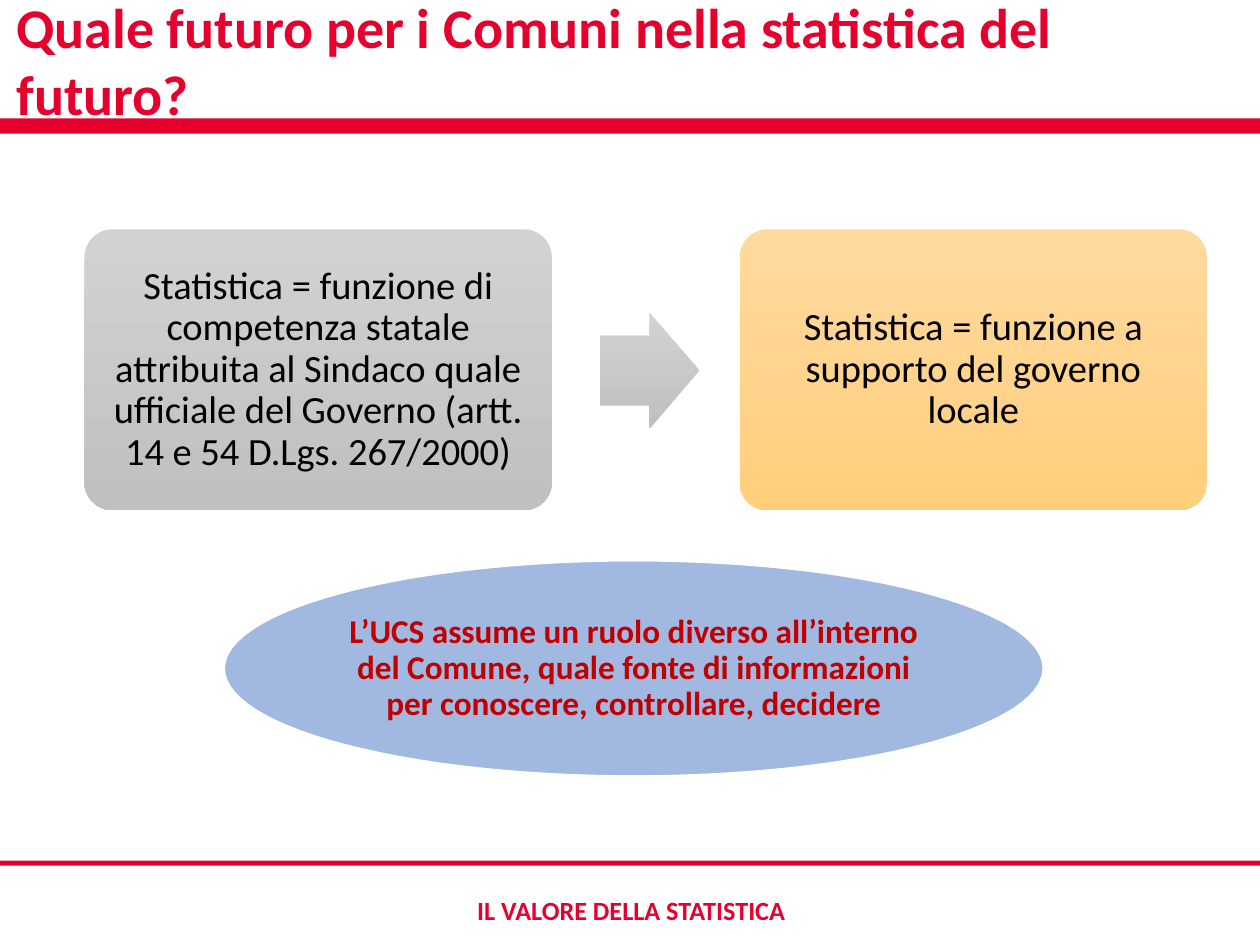
from dataclasses import dataclass

from lxml import etree
from pptx import Presentation
from pptx import util as u
from pptx.dml.color import RGBColor as Rgb
from pptx.enum import shapes, text
from pptx.oxml.ns import qn

KIND = shapes.MSO_SHAPE
ALIGN = text.PP_ALIGN


@dataclass(frozen=True)
class Theme:
    font: str = "Calibri"
    red: str = "E6002D"
    dark: str = "C00000"
    black: str = "000000"
    white: str = "FFFFFF"
    blue: str = "4472C4"
    grey: tuple = ("D2D2D2", "C0C0C0")
    gold: tuple = ("FFD99E", "FFCF7C")
    head: int = 32
    body: int = 22
    note: int = 19
    foot: int = 15


def write(shape, words, size, color, bold=False, align=ALIGN.CENTER,
          inset=0.1, space=1.0, anchor=text.MSO_ANCHOR.MIDDLE):
    frame = shape.text_frame
    frame.word_wrap = True
    frame.auto_size = text.MSO_AUTO_SIZE.NONE
    frame.vertical_anchor = anchor
    frame.margin_left = frame.margin_right = u.Inches(inset)
    frame.margin_top = frame.margin_bottom = u.Inches(min(inset, 0.05))
    para = frame.paragraphs[0]
    para.text = words
    para.alignment = align
    para.line_spacing = space
    font = para.runs[0].font
    font.name, font.size, font.bold = Theme.font, u.Pt(size), bold
    font.color.rgb = Rgb.from_string(color)


class Deck:
    """Build one slide in a shared style."""

    def __init__(self, theme):
        self.theme = theme
        self.show = Presentation()
        self.show.slide_width, self.show.slide_height = u.Inches(10), u.Inches(7.5)
        self.slide = self.show.slides.add_slide(self.show.slide_layouts[5])

    def shape(self, kind, box, fill, adjust=()):
        item = self.slide.shapes.add_shape(kind, *map(u.Inches, box))
        item.shadow.inherit = False
        item.line.fill.background()
        for i, value in enumerate(adjust):
            item.adjustments[i] = value
        if isinstance(fill, tuple):
            item.fill.gradient()
            item.fill.gradient_angle = 270
            for stop, color in zip(item.fill.gradient_stops, fill):
                stop.color.rgb = Rgb.from_string(color)
        else:
            item.fill.solid()
            item.fill.fore_color.rgb = Rgb.from_string(fill)
        return item

    def title(self, words, box):
        item = self.slide.shapes.title
        item.left, item.top, item.width, item.height = map(u.Inches, box)
        write(item, words, self.theme.head, self.theme.red, bold=True, align=ALIGN.LEFT)

    def bar(self, top, height):
        self.shape(KIND.RECTANGLE, (0, top, 10, height), self.theme.red)

    def card(self, words, left, fill):
        item = self.shape(KIND.ROUNDED_RECTANGLE, (left, 1.82, 3.71, 2.23), fill, [0.1])
        write(item, words, self.theme.body, self.theme.black, inset=0.09, space=0.9)

    def arrow(self, box):
        self.shape(KIND.RIGHT_ARROW, box, self.theme.grey, [0.6, 0.5])

    def oval(self, words, box):
        item = self.shape(KIND.OVAL, box, self.theme.blue)
        color = item.fill._xPr.find(qn("a:solidFill"))[0]
        etree.SubElement(color, qn("a:alpha"), val="50000")
        item.line.color.rgb = Rgb.from_string(self.theme.white)
        item.line.width = u.Pt(1)
        write(item, words, self.theme.note, self.theme.dark, bold=True, inset=0, space=0.9)

    def foot(self, words, box):
        item = self.slide.shapes.add_textbox(*map(u.Inches, box))
        write(item, words, self.theme.foot, self.theme.red, bold=True,
              anchor=text.MSO_ANCHOR.TOP)


def main():
    theme = Theme()
    deck = Deck(theme)
    deck.bar(6.83, 0.04)
    deck.foot("IL VALORE DELLA STATISTICA", (2.12, 7.05, 5.78, 0.35))
    deck.bar(0.94, 0.12)
    deck.title("Quale futuro per i Comuni nella statistica del futuro?",
               (0.03, 0.04, 9.85, 0.87))
    deck.card("Statistica = funzione di competenza statale attribuita al Sindaco "
              "quale ufficiale del Governo (artt. 14 e 54 D.Lgs. 267/2000)",
              0.67, theme.grey)
    deck.arrow((4.76, 2.48, 0.79, 0.92))
    deck.card("Statistica = funzione a supporto del governo locale", 5.87, theme.gold)
    deck.oval("L’UCS assume un ruolo diverso all’interno del Comune, quale fonte di "
              "informazioni per conoscere, controllare, decidere",
              (1.78, 4.45, 6.5, 1.71))
    deck.show.save("out.pptx")


if __name__ == "__main__":
    main()
